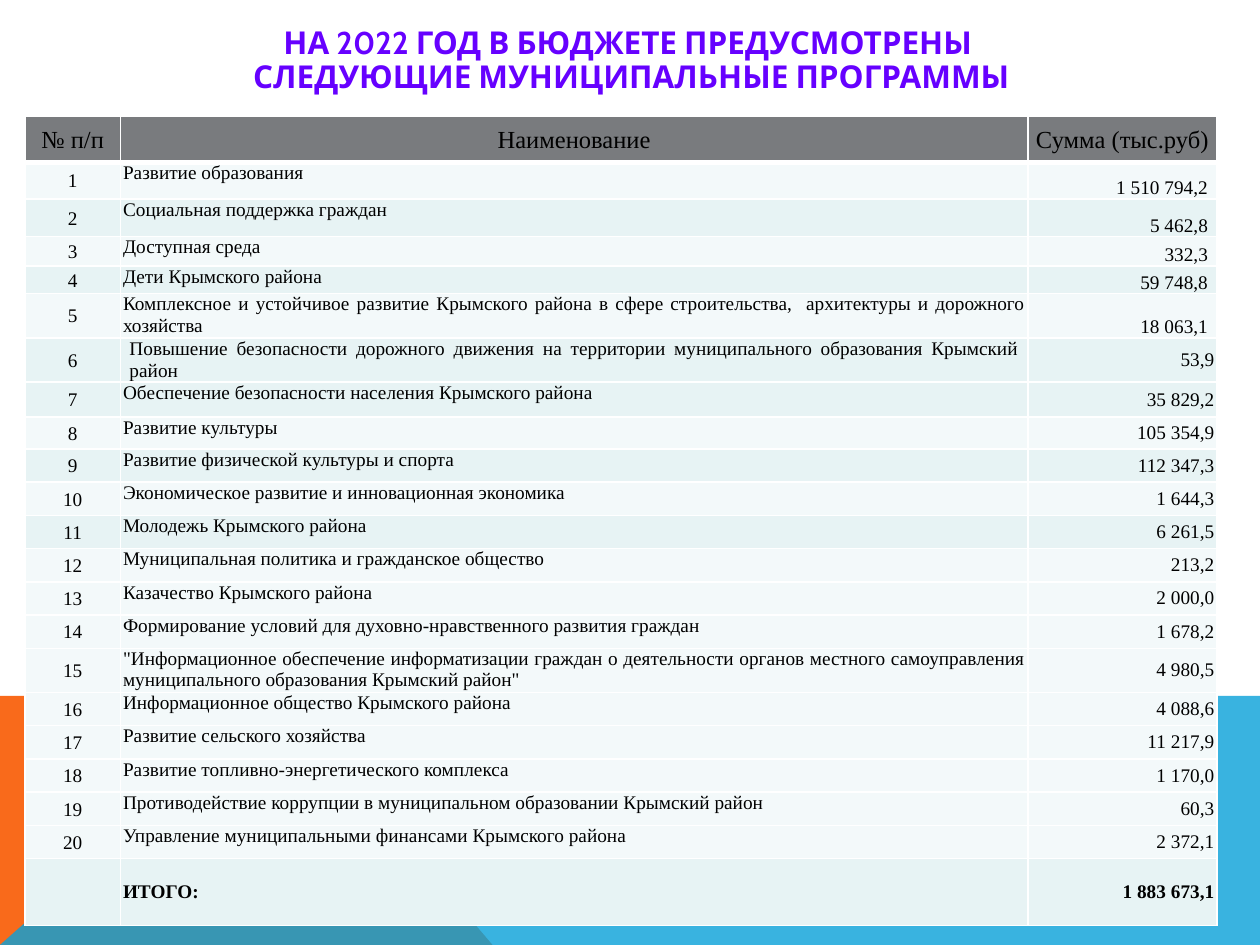
"""Build the slide listing the municipal programmes of the 2022 budget."""
from lxml.etree import SubElement
from pptx import Presentation
from pptx.dml.color import RGBColor as Rgb
from pptx.enum.text import MSO_ANCHOR as Anchor, PP_ALIGN as Align
from pptx.oxml.ns import qn
from pptx.util import Cm, Pt

THEME = {
    "title_font": "Cabin", "table_font": "Times New Roman",
    "title_size": 18, "header_size": 14, "body_size": 11,
    "title": "6600FF", "text": "000000", "header": "797B7E",
    "plain": "F3F9FA", "tinted": "E7F3F4", "border": "FFFFFF",
    "orange": "F96A1B", "blue": "08A1D9", "blue_alpha": 80000,
}
TITLE = "НА 2022 ГОД В БЮДЖЕТЕ ПРЕДУСМОТРЕНЫ \vСЛЕДУЮЩИЕ МУНИЦИПАЛЬНЫЕ ПРОГРАММЫ"
HEADERS = ("№ п/п", "Наименование", "Сумма (тыс.руб)")
PROGRAMMES = [
    ("Развитие образования", "1 510 794,2", 0.74),
    ("Социальная поддержка граждан", "5 462,8", 0.76),
    ("Доступная среда", "332,3", 0.59),
    ("Дети Крымского района", "59 748,8", 0.56),
    ("Комплексное и устойчивое развитие Крымского района в сфере строительства,  "
     "архитектуры и дорожного хозяйства", "18 063,1", 0.89),
    ("Повышение безопасности дорожного движения на территории муниципального "
     "образования Крымский район", "53,9", 0.89),
    ("Обеспечение безопасности населения Крымского района", "35 829,2", 0.71),
    ("Развитие культуры", "105 354,9", 0.64),
    ("Развитие физической культуры и спорта", "112 347,3", 0.67),
    ("Экономическое развитие и инновационная экономика", "1 644,3", 0.67),
    ("Молодежь Крымского района", "6 261,5", 0.67),
    ("Муниципальная политика и гражданское общество", "213,2", 0.67),
    ("Казачество Крымского района", "2 000,0", 0.67),
    ("Формирование условий для духовно-нравственного развития граждан", "1 678,2", 0.67),
    ("\"Информационное обеспечение информатизации граждан о деятельности органов местного "
     "самоуправления муниципального образования Крымский район\"", "4 980,5", 0.89),
    ("Информационное общество Крымского района", "4 088,6", 0.67),
    ("Развитие сельского хозяйства", "11 217,9", 0.67),
    ("Развитие топливно-энергетического комплекса", "1 170,0", 0.67),
    ("Противодействие коррупции в муниципальном образовании Крымский район", "60,3", 0.67),
    ("Управление муниципальными финансами Крымского района", "2 372,1", 0.67),
]
TOTAL = ("", "ИТОГО:", "1 883 673,1")
TINTED_ROWS = {2, 4, 6, 7, 9, 11, len(PROGRAMMES) + 1}
LEFT_ROWS = {9, 10}
INDENTED_ROW = 6
LAST_BOTTOM_ROW = 5
COLUMN_WIDTHS = (1.93, 18.29, 3.81)
HEADER_HEIGHT, TOTAL_HEIGHT = 0.93, 1.35
NARROW, WIDE = 0.05, 0.18
SLIDE_W, SLIDE_H = 25.4, 19.05
BAND_TOP, BAND_BEND = 14.03, 5.66
ORANGE_WEDGE = [(0, SLIDE_H), (0, BAND_TOP), (BAND_BEND, BAND_TOP), (9.93, SLIDE_H)]
BLUE_BAND = [(0, SLIDE_H), (BAND_BEND, BAND_TOP), (SLIDE_W, BAND_TOP), (SLIDE_W, SLIDE_H)]


def color(name):
    return Rgb.from_string(THEME[name])


def format_runs(paragraph, font, size, ink, bold):
    for run in paragraph.runs:
        run.font.name, run.font.size, run.font.bold = THEME[font], Pt(THEME[size]), bold
        run.font.color.rgb = color(ink)


def add_band(slide, corners, fill, alpha=None):
    points = [(Cm(x), Cm(y)) for x, y in corners]
    builder = slide.shapes.build_freeform(*points[0], scale=1.0)
    builder.add_line_segments(points[1:], close=True)
    band = builder.convert_to_shape()
    band.shadow.inherit = False
    band.fill.solid()
    band.fill.fore_color.rgb = color(fill)
    band.line.fill.background()
    if alpha:
        tint = band.fill._xPr.find(f"{qn('a:solidFill')}/{qn('a:srgbClr')}")
        SubElement(tint, qn("a:alpha"), val=str(alpha))


def set_borders(cell, widths):
    properties = cell._tc.get_or_add_tcPr()
    for position, (side, width) in enumerate(widths.items()):
        line = SubElement(properties, qn(f"a:{side}"), w=str(Pt(width)))
        fill = SubElement(line, qn("a:solidFill"))
        SubElement(fill, qn("a:srgbClr"), val=THEME["border"])
        properties.remove(line)
        properties.insert(position, line)


def cell_layout(row, column):
    """Return alignment, anchor and side margin of a table cell."""
    if row == 0 or column == 0:
        return Align.CENTER, Anchor.MIDDLE, 0.03
    if column == 2:
        low = row <= LAST_BOTTOM_ROW
        return Align.RIGHT, Anchor.BOTTOM if low else Anchor.MIDDLE, WIDE if low else NARROW
    align = Align.LEFT if row in LEFT_ROWS else Align.JUSTIFY
    if row == INDENTED_ROW:
        return align, Anchor.MIDDLE, WIDE
    return align, Anchor.MIDDLE if row > len(PROGRAMMES) else Anchor.TOP, NARROW


def fill_cell(cell, row, column, text):
    align, anchor, margin = cell_layout(row, column)
    cell.text_frame.text = text
    cell.vertical_anchor = anchor
    cell.margin_left = cell.margin_right = Cm(margin)
    cell.margin_top = Cm(0.03 if align == Align.CENTER else 0)
    cell.margin_bottom = Cm(0)
    paragraph = cell.text_frame.paragraphs[0]
    paragraph.alignment = align
    size = "body_size" if row else "header_size"
    format_runs(paragraph, "table_font", size, "text", row > len(PROGRAMMES))
    cell.fill.solid()
    tone = "tinted" if row in TINTED_ROWS else "plain"
    cell.fill.fore_color.rgb = color(tone if row else "header")
    set_borders(cell, {"lnL": 1, "lnR": 1, "lnT": 3 if row == 1 else 1, "lnB": 1 if row else 3})


def add_programme_table(slide):
    numbered = [(str(n), name, amount) for n, (name, amount, _) in enumerate(PROGRAMMES, 1)]
    rows = [HEADERS, *numbered, TOTAL]
    heights = [HEADER_HEIGHT, *(height for _, _, height in PROGRAMMES), TOTAL_HEIGHT]
    table = slide.shapes.add_table(
        len(rows), len(HEADERS), Cm(0.5), Cm(2.34),
        Cm(sum(COLUMN_WIDTHS)), Cm(sum(heights))).table
    for column, width in zip(table.columns, COLUMN_WIDTHS):
        column.width = Cm(width)
    for row, (texts, height) in enumerate(zip(rows, heights)):
        table.rows[row].height = Cm(height)
        for column, text in enumerate(texts):
            fill_cell(table.cell(row, column), row, column, text)


def set_title(slide):
    title = slide.shapes.title
    title.left, title.top, title.width, title.height = Cm(1.3), Cm(0.33), Cm(22.86), Cm(1.8)
    title.text_frame.text = TITLE
    title.text_frame.vertical_anchor = Anchor.MIDDLE
    heading = title.text_frame.paragraphs[0]
    heading.alignment, heading.line_spacing = Align.CENTER, 0.9
    format_runs(heading, "title_font", "title_size", "title", True)


def main():
    deck = Presentation()
    deck.slide_width, deck.slide_height = Cm(SLIDE_W), Cm(SLIDE_H)
    slide = deck.slides.add_slide(deck.slide_layouts[5])
    add_band(slide, ORANGE_WEDGE, "orange")
    add_band(slide, BLUE_BAND, "blue", THEME["blue_alpha"])
    set_title(slide)
    add_programme_table(slide)
    deck.save("out.pptx")


if __name__ == "__main__":
    main()
